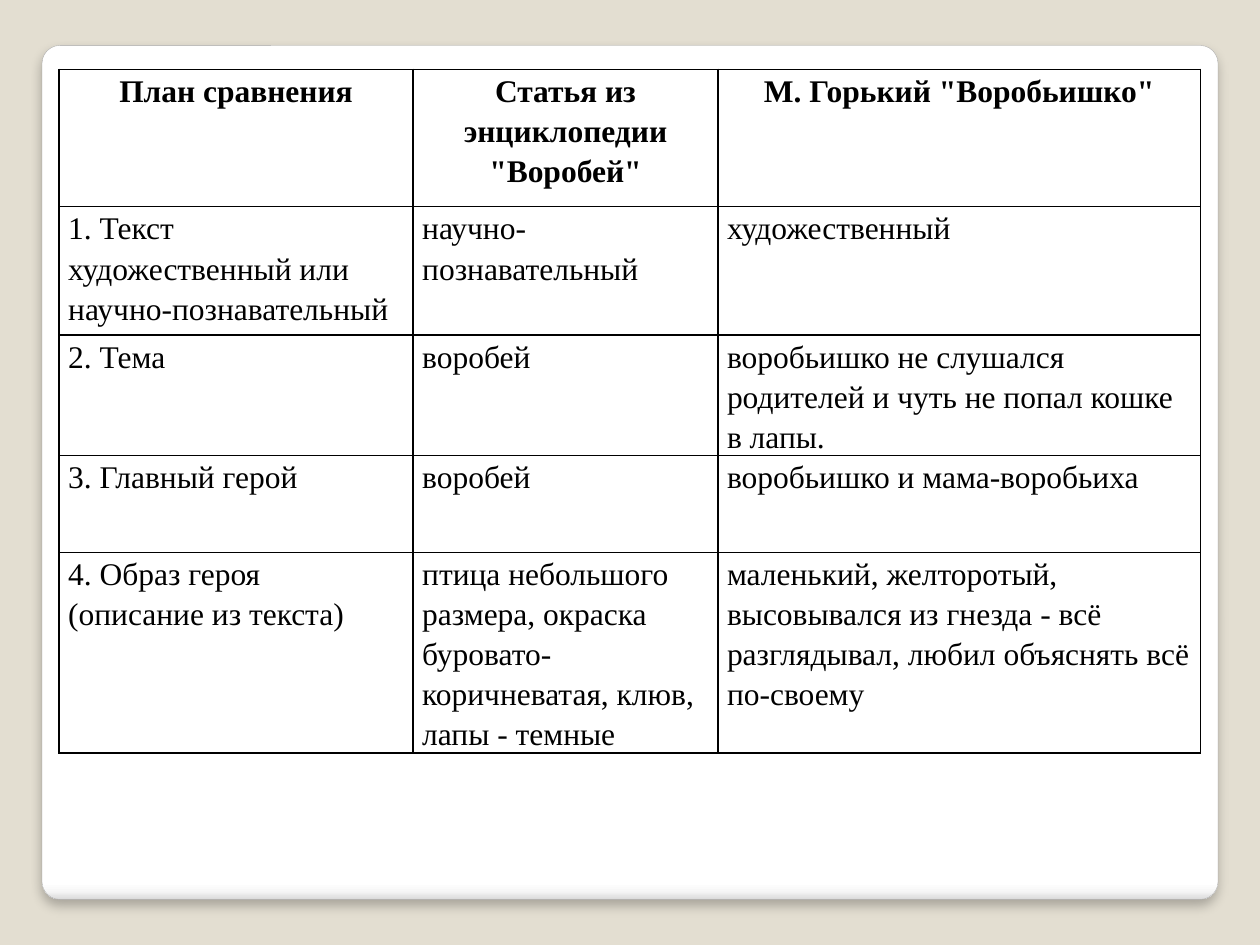
from pptx import Presentation
from pptx.dml.color import RGBColor
from pptx.enum.shapes import MSO_SHAPE as SHAPE
from pptx.enum.text import PP_ALIGN as ALIGN
from pptx.oxml import parse_xml
from pptx.oxml.ns import nsdecls, qn
from pptx.util import Pt

FONT = "Times New Roman"
COLS = [202.3, 174.2, 275.8]
ROWS = [78.5, 73.4, 55.4, 55.4, 111.6]
CELLS = [
    ["План сравнения", "Статья из энциклопедии\n\"Воробей\"", "М. Горький \"Воробьишко\""],
    ["1. Текст художественный или научно-познавательный", "научно-познавательный",
     "художественный"],
    ["2. Тема", "воробей",
     "воробьишко не слушался родителей и чуть не попал кошке в лапы."],
    ["3. Главный герой", "воробей", "воробьишко и мама-воробьиха"],
    ["4. Образ героя (описание из текста)",
     "птица небольшого размера, окраска буровато-коричневатая, клюв, лапы - темные",
     "маленький, желторотый, высовывался из гнезда - всё разглядывал, "
     "любил объяснять всё по-своему"],
]
STOPS = [(0, "FFFFFF"), (98, "FFFFFF"), (99, "F7F7F7"), (100, "DADADA")]


def rgb(color):
    return RGBColor.from_string(color)


def add_panel(s, x, y, w, h):
    sp = s.shapes.add_shape(SHAPE.ROUNDED_RECTANGLE, Pt(x), Pt(y), Pt(w), Pt(h))
    sp.adjustments[0] = 0.021
    sp.line.color.rgb = rgb("A4A4A4")
    sp.line.width = Pt(0.16)
    sp.fill.gradient()
    sp.fill.gradient_angle = 270
    stops = sp._element.spPr.find(".//" + qn("a:gsLst"))
    for stop in list(stops):
        stops.remove(stop)
    for pos, color in STOPS:
        stops.append(parse_xml(
            f'<a:gs {nsdecls("a")} pos="{pos * 1000}"><a:srgbClr val="{color}"/></a:gs>'))
    sp.shadow.inherit = False
    sp._element.spPr.find(qn("a:effectLst")).append(parse_xml(
        f'<a:outerShdw {nsdecls("a")} blurRad="{Pt(6)}" dist="{Pt(4)}" dir="5400000" '
        'algn="t" rotWithShape="0"><a:srgbClr val="000000"><a:alpha val="25000"/>'
        '</a:srgbClr></a:outerShdw>'))


def style_cell(cell):
    cell.margin_left = cell.margin_right = Pt(5.2)
    cell.margin_top = cell.margin_bottom = 0
    tc_pr = cell._tc.get_or_add_tcPr()
    for side in "LRTB":
        tc_pr.append(parse_xml(
            f'<a:ln{side} {nsdecls("a")} w="{Pt(1)}"><a:solidFill>'
            f'<a:srgbClr val="000000"/></a:solidFill></a:ln{side}>'))
    cell.fill.background()


def write_cell(cell, text, header):
    tf = cell.text_frame
    for i, line in enumerate(text.split("\n")):
        p = tf.add_paragraph() if i else tf.paragraphs[0]
        p.alignment = ALIGN.CENTER if header else ALIGN.LEFT
        p.line_spacing = 1.15
        r = p.add_run()
        r.text = line
        r.font.name = FONT
        r.font.size = Pt(18)
        r.font.bold = header
        r.font.color.rgb = rgb("000000")


def add_comparison(s, x, y, w, h):
    table = s.shapes.add_table(len(ROWS), len(COLS), Pt(x), Pt(y), Pt(w), Pt(h)).table
    table.first_row = table.horz_banding = False
    for col, width in zip(table.columns, COLS):
        col.width = Pt(width)
    for i, (row, height) in enumerate(zip(table.rows, ROWS)):
        row.height = Pt(height)
        for cell, text in zip(row.cells, CELLS[i]):
            style_cell(cell)
            write_cell(cell, text, i == 0)
    p_pr = table.cell(0, 2).text_frame.paragraphs[0]._p.get_or_add_pPr()
    p_pr.set("marL", str(Pt(5)))
    p_pr.set("indent", str(Pt(-5)))


def main():
    prs = Presentation()
    prs.slide_width, prs.slide_height = Pt(720), Pt(540)
    s = prs.slides.add_slide(prs.slide_layouts[6])
    s.background.fill.solid()
    s.background.fill.fore_color.rgb = rgb("E3DED1")
    add_panel(s, 24, 26, 672, 488)
    add_comparison(s, 33.8, 39.6, sum(COLS), sum(ROWS))
    prs.save("out.pptx")


if __name__ == "__main__":
    main()
